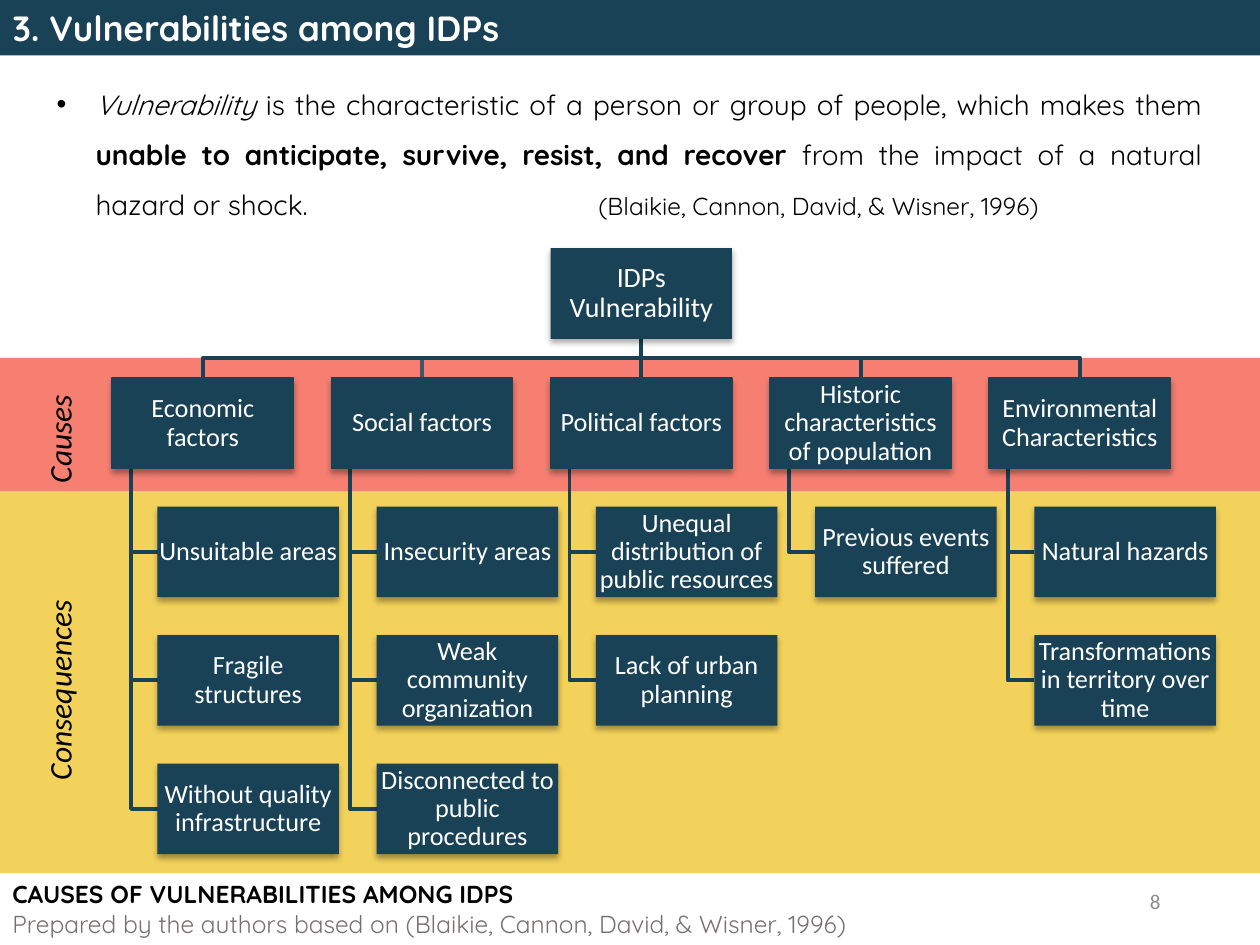
from lxml.etree import SubElement
from pptx import Presentation
from pptx.dml.color import RGBColor
from pptx.enum.shapes import MSO_CONNECTOR as CONNECTOR, MSO_SHAPE as SHAPE
from pptx.enum.text import MSO_ANCHOR as ANCHOR, MSO_AUTO_SIZE as AUTO_SIZE, PP_ALIGN as ALIGN
from pptx.oxml.ns import qn
from pptx.util import Inches, Pt

COLORS = {"navy": "194256", "slate": "44546A", "red": "F67F72", "yellow": "F3D25B",
          "white": "FFFFFF", "black": "000000", "gray": "767171", "number": "8C8C8C"}

# Content: each text is a list of paragraphs, each paragraph a list of (text, format) runs
TITLE = "3. Vulnerabilities among IDPs"
DEFINITION = [[
    ("Vulnerability ", {"italic": True}),
    ("is the characteristic of a person or group of people, which makes them ", {}),
    ("unable to anticipate, survive, resist, and recover", {"bold": True}),
    (" from the impact of a natural hazard or shock.\t", {}),
    ("(Blaikie, Cannon, David, & Wisner, 1996)", {"size": 14}),
]]
CAPTION = [
    [("CAUSES OF VULNERABILITIES AMONG IDPS", {"bold": True})],
    [("Prepared by\u00a0the authors based on (Blaikie, Cannon, David, & Wisner, 1996)",
      {"color": "gray"})],
]
BANDS = [("yellow", 3.9, 3.03), ("red", 2.84, 1.06)]
SIDE_LABELS = [("Causes", 2.75, 1.47), ("Consequences ", 4.37, 2.16)]
ROOT = "IDPs Vulnerability"
FACTORS = [
    ("Economic factors",
     ["Unsuitable areas", "Fragile structures", "Without quality infrastructure"]),
    ("Social factors",
     ["Insecurity areas", "Weak community organization", "Disconnected to public procedures"]),
    ("Political factors",
     ["Unequal distribution of public resources", "Lack of urban planning"]),
    ("Historic characteristics of population", ["Previous events suffered"]),
    ("Environmental Characteristics",
     ["Natural hazards", "Transformations in territory over time"]),
]

# Chart grid, in inches
BOX_W, BOX_H = 1.44, 0.72
FIRST_LEFT, COLUMN_STEP = 0.89, 1.74
ROOT_TOP, FACTOR_TOP, ROW_STEP = 1.97, 3.0, 1.02
BUS_Y, SPINE_OFFSET, CHILD_OFFSET = 2.84, 0.15, 0.36


def rgb(name):
    return RGBColor.from_string(COLORS[name])


def write(shape, paragraphs, size=16, font="Quicksand", color="black", align=ALIGN.LEFT,
          anchor=ANCHOR.TOP, spacing=1.0, inset=None, **style):
    if isinstance(paragraphs, str):
        paragraphs = [[(paragraphs, {})]]
    frame = shape.text_frame
    frame.word_wrap = True
    frame.auto_size = AUTO_SIZE.NONE
    frame.vertical_anchor = anchor
    if inset is not None:
        frame.margin_left = frame.margin_right = Inches(inset)
        frame.margin_top = frame.margin_bottom = Inches(inset)
    for index, runs in enumerate(paragraphs):
        para = frame.paragraphs[0] if index == 0 else frame.add_paragraph()
        para.alignment = align
        para.line_spacing = spacing
        for text, extra in runs:
            look = {"size": size, "color": color, **style, **extra}
            span = para.add_run()
            span.text = text
            span.font.name = font
            span.font.size = Pt(look["size"])
            span.font.bold = look.get("bold", False)
            span.font.italic = look.get("italic", False)
            span.font.color.rgb = rgb(look["color"])
    return frame


def place(shape, left, top, width, height):
    shape.left, shape.top = Inches(left), Inches(top)
    shape.width, shape.height = Inches(width), Inches(height)


def add_text(left, top, width, height, paragraphs, **style):
    box = page.shapes.add_textbox(*map(Inches, (left, top, width, height)))
    return write(box, paragraphs, **style)


def add_rect(left, top, width, height, color):
    rect = page.shapes.add_shape(SHAPE.RECTANGLE, *map(Inches, (left, top, width, height)))
    rect.shadow.inherit = False
    rect.fill.solid()
    rect.fill.fore_color.rgb = rgb(color)
    rect.line.fill.background()
    return rect


def add_box(left, top, text, size=15, outlined=False):
    box = add_rect(left, top, BOX_W, BOX_H, "navy")
    if outlined:
        box.line.color.rgb = rgb("navy")
        box.line.width = Pt(0.75)
    effects = box._element.spPr.find(qn("a:effectLst"))
    shadow = SubElement(effects, qn("a:outerShdw"), blurRad=str(Pt(3.5)), dist=str(Pt(2.2)),
                        dir="5400000", algn="ctr", rotWithShape="0")
    tint = SubElement(shadow, qn("a:srgbClr"), val=COLORS["black"])
    SubElement(tint, qn("a:alpha"), val="32000")
    write(box, text, size=size, font="Calibri", color="white", align=ALIGN.CENTER,
          anchor=ANCHOR.MIDDLE, spacing=0.9, inset=0.01)


def add_link(points, color="navy"):
    corners = [(Inches(x), Inches(y)) for x, y in points]
    if len({x for x, _ in corners}) == 1:
        link = page.shapes.add_connector(CONNECTOR.STRAIGHT, *corners[0], *corners[-1])
        SubElement(link._element.spPr, qn("a:effectLst"))
    else:
        builder = page.shapes.build_freeform(*corners[0])
        builder.add_line_segments(corners[1:], close=False)
        link = builder.convert_to_shape()
        link.shadow.inherit = False
        link.fill.background()
    link.line.color.rgb = rgb(color)
    link.line.width = Pt(2.25)


deck = Presentation()
deck.slide_width, deck.slide_height = Inches(10), Inches(7.5)
page = deck.slides.add_slide(deck.slide_layouts[5])

# Title bar
title = page.shapes.title
place(title, 0, 0, 10, 0.44)
title.fill.solid()
title.fill.fore_color.rgb = rgb("navy")
write(title, TITLE, size=20, color="white", bold=True, anchor=ANCHOR.MIDDLE)

# Definition bullet, with a tab stop before the citation
definition = add_text(0.35, 0.51, 9.29, 1.31, DEFINITION, align=ALIGN.JUSTIFY, spacing=1.5)
props = definition.paragraphs[0]._p.get_or_add_pPr()
props.set("marL", str(Inches(0.31)))
props.set("indent", str(Inches(-0.31)))
SubElement(props, qn("a:buFont"), typeface="Arial")
SubElement(props, qn("a:buChar"), char="•")
tabs = SubElement(props, qn("a:tabLst"))
SubElement(tabs, qn("a:tab"), pos=str(Inches(4.3)), algn="l")

# Caption and coloured bands
add_text(0, 6.93, 10, 0.57, CAPTION, size=14)
for color, top, height in BANDS:
    add_rect(0, top, 10, height, color)

# Links, drawn before the boxes
lefts = [FIRST_LEFT + column * COLUMN_STEP for column in range(len(FACTORS))]
root_left = lefts[len(lefts) // 2]
root_x = root_left + BOX_W / 2
for column, (left, (factor, effects)) in enumerate(zip(lefts, FACTORS)):
    factor_x = left + BOX_W / 2
    spine_x = left + SPINE_OFFSET
    for row in range(len(effects), 0, -1):
        middle = FACTOR_TOP + row * ROW_STEP + BOX_H / 2
        add_link([(spine_x, FACTOR_TOP + BOX_H), (spine_x, middle),
                  (left + CHILD_OFFSET, middle)])
# The slate link goes under the first factor's, which covers its horizontal part
for column in (4, 3, 2, 1, 0):
    factor_x = lefts[column] + BOX_W / 2
    add_link([(root_x, ROOT_TOP + BOX_H), (root_x, BUS_Y), (factor_x, BUS_Y),
              (factor_x, FACTOR_TOP)], "slate" if column == 1 else "navy")

# Boxes
add_box(root_left, ROOT_TOP, ROOT, size=16)
for left, (factor, effects) in zip(lefts, FACTORS):
    add_box(left, FACTOR_TOP, factor, outlined=True)
    for row, effect in enumerate(effects, 1):
        add_box(left + CHILD_OFFSET, FACTOR_TOP + row * ROW_STEP, effect)

# Side labels, turned to read upwards
for text, top, height in SIDE_LABELS:
    label = add_text(0.27, top, 0.5, height, text, size=18, font="Calibri",
                     align=ALIGN.CENTER, italic=True)
    label._txBody.bodyPr.set("vert", "vert270")

# Page number
add_text(7.06, 6.95, 2.25, 0.4, "8", size=12, font="Calibri", color="number",
         align=ALIGN.RIGHT, anchor=ANCHOR.MIDDLE)

deck.save("out.pptx")
